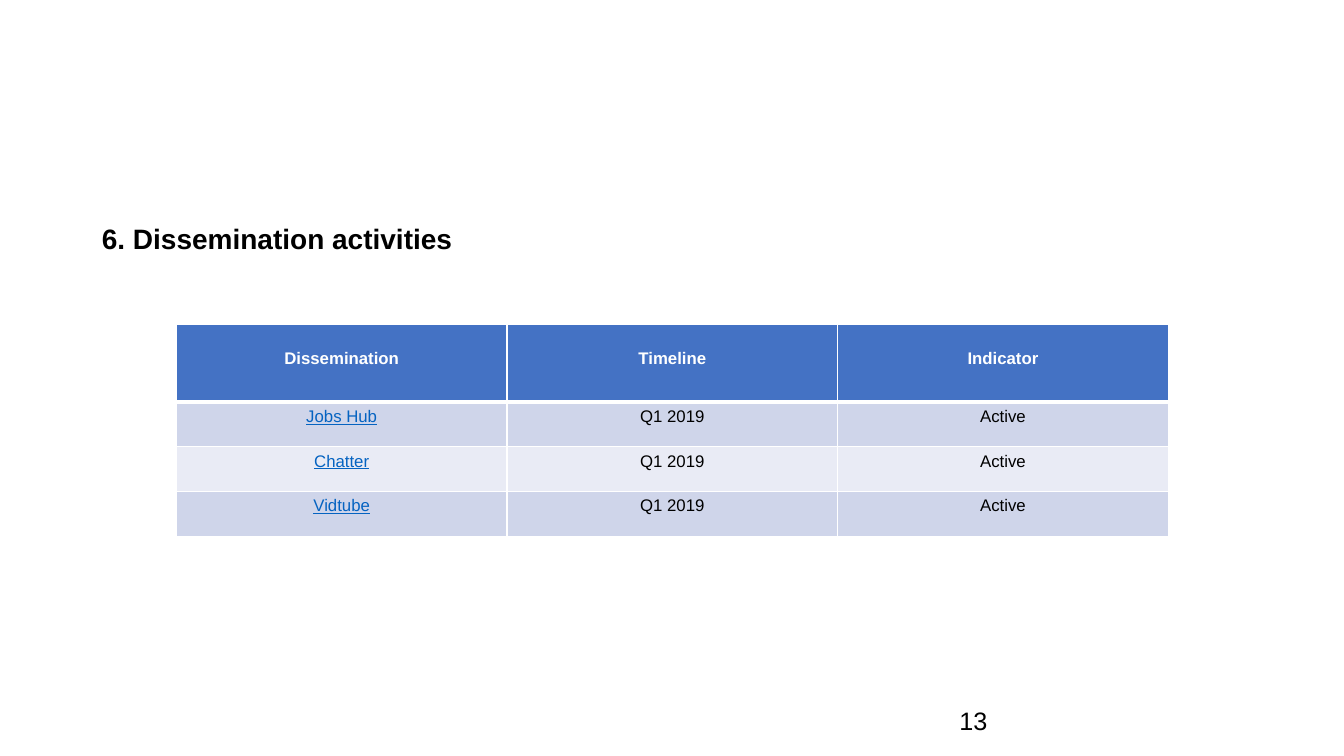
from lxml import etree
from pptx import Presentation
from pptx.dml.color import RGBColor
from pptx.enum.text import MSO_ANCHOR, PP_ALIGN
from pptx.oxml.ns import qn
from pptx.util import Pt

LEFT, CENTER = PP_ALIGN.LEFT, PP_ALIGN.CENTER
TOP, MIDDLE = MSO_ANCHOR.TOP, MSO_ANCHOR.MIDDLE
COLORS = {
    "text": "000000",
    "white": "FFFFFF",
    "header": "4472C4",
    "link": "0563C1",
    "odd_row": "CFD5EA",
    "even_row": "E9EBF5",
}


def add_run(paragraph, text, size, color, bold=False, underline=False):
    run = paragraph.add_run()
    run.text = text
    run.font.name = "Arial"
    run.font.size = Pt(size)
    run.font.bold = bold
    run.font.underline = underline
    run.font.color.rgb = RGBColor.from_string(COLORS[color])


def add_border(cell, side, width):
    line = etree.SubElement(cell._tc.get_or_add_tcPr(), qn(f"a:{side}"), w=str(Pt(width)))
    fill = etree.SubElement(line, qn("a:solidFill"))
    etree.SubElement(fill, qn("a:srgbClr"), val=COLORS["white"])


presentation = Presentation()
presentation.slide_width = Pt(960)
presentation.slide_height = Pt(540)
slide = presentation.slides.add_slide(presentation.slide_layouts[5])

# Title
title = slide.shapes.title
title.left, title.top, title.width, title.height = Pt(65.5), Pt(157), Pt(738.7), Pt(31)
title.text_frame.vertical_anchor = TOP
title.text_frame.word_wrap = True
paragraph = title.text_frame.paragraphs[0]
paragraph.alignment = LEFT
paragraph.line_spacing = 0.9
add_run(paragraph, "6. Dissemination activities", 20, "text", bold=True)

# Dissemination table
rows = [
    ("Dissemination", "Timeline", "Indicator"),
    ("Jobs Hub", "Q1 2019", "Active"),
    ("Chatter", "Q1 2019", "Active"),
    ("Vidtube", "Q1 2019", "Active"),
]
frame = slide.shapes.add_table(len(rows), 3, Pt(126), Pt(231.9), Pt(708.6), Pt(151.2))
table = frame.table
for column in table.columns:
    column.width = Pt(236.2)

for row_index, texts in enumerate(rows):
    is_header = row_index == 0
    table.rows[row_index].height = Pt(55.2 if is_header else 32)
    if is_header:
        fill_color = "header"
    else:
        fill_color = "odd_row" if row_index % 2 else "even_row"
    for column_index, text in enumerate(texts):
        cell = table.cell(row_index, column_index)
        is_link = column_index == 0 and not is_header
        for side in ("lnL", "lnR", "lnT", "lnB"):
            thick = (row_index, side) in ((0, "lnB"), (1, "lnT"))
            add_border(cell, side, 3 if thick else 1)
        cell.fill.solid()
        cell.fill.fore_color.rgb = RGBColor.from_string(COLORS[fill_color])
        cell.vertical_anchor = TOP
        cell.margin_top = Pt(17.4 if is_header else 3.6)
        paragraph = cell.text_frame.paragraphs[0]
        paragraph.alignment = CENTER
        color = "white" if is_header else "link" if is_link else "text"
        add_run(paragraph, text, 12, color, bold=is_header, underline=is_link)

# Page number
page_number = slide.shapes.add_textbox(Pt(678.2), Pt(500.4), Pt(216), Pt(28.8))
page_number.text_frame.word_wrap = True
page_number.text_frame.vertical_anchor = MIDDLE
add_run(page_number.text_frame.paragraphs[0], "13", 18, "text")

presentation.save("out.pptx")
